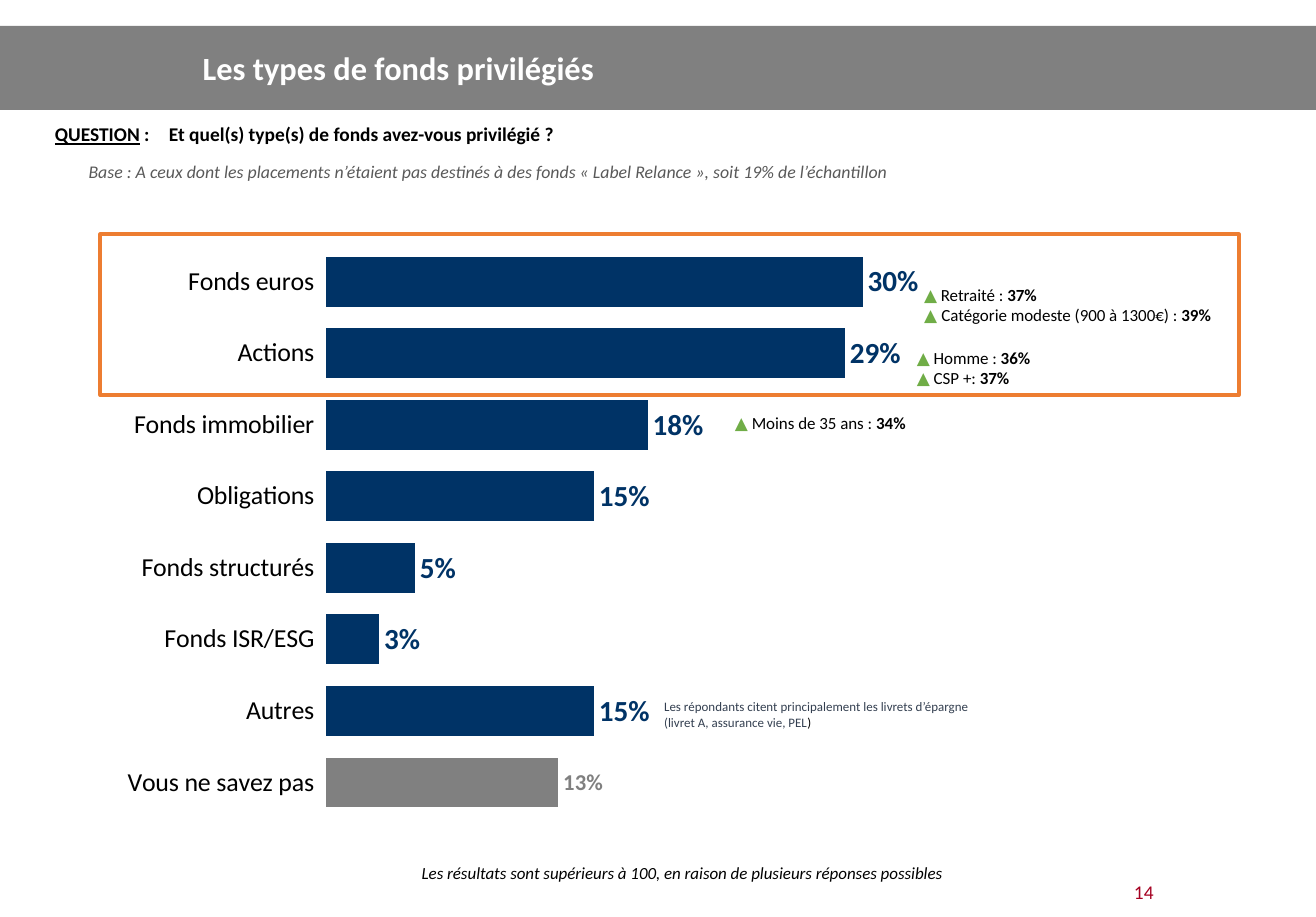
from lxml import etree
from pptx import Presentation
from pptx.chart.data import CategoryChartData
from pptx.dml.color import RGBColor
from pptx.enum.chart import XL_CHART_TYPE, XL_LABEL_POSITION, XL_TICK_MARK
from pptx.enum.shapes import MSO_SHAPE
from pptx.enum.text import MSO_ANCHOR, PP_ALIGN
from pptx.oxml.ns import qn
from pptx.util import Pt

BAR_CLUSTERED = XL_CHART_TYPE.BAR_CLUSTERED
OUTSIDE_END = XL_LABEL_POSITION.OUTSIDE_END
TICK_OUTSIDE = XL_TICK_MARK.OUTSIDE
RECTANGLE = MSO_SHAPE.RECTANGLE
MIDDLE = MSO_ANCHOR.MIDDLE
LEFT, CENTER, JUSTIFY = PP_ALIGN.LEFT, PP_ALIGN.CENTER, PP_ALIGN.JUSTIFY

COLORS = {
    "band": "808080", "white": "FFFFFF", "black": "000000", "navy": "003366",
    "orange": "ED7D31", "green": "70AD47", "base": "595959", "remark": "333F50",
    "page": "A50021",
}
FUNDS = {
    "Fonds euros": 0.30, "Actions": 0.29, "Fonds immobilier": 0.18,
    "Obligations": 0.15, "Fonds structurés": 0.05, "Fonds ISR/ESG": 0.03,
    "Autres": 0.15, "Vous ne savez pas": 0.13,
}
NOTES = [
    (563.8, 172, [("Retraité : ", "37%", "Calibri"),
                  ("Catégorie modeste (900 à 1300€) : ", "39%", "Lato")]),
    (559.4, 211, [("Homme : ", "36%", "Calibri"), ("CSP +: ", "37%", "Calibri")]),
    (447, 251.3, [("Moins de 35 ans : ", "34%", "Calibri")]),
]


class SlideBuilder:
    def __init__(self, deck, slide, font_name):
        self.deck = deck
        self.slide = slide
        self.font_name = font_name

    def color(self, name):
        return RGBColor.from_string(COLORS[name])

    def format_font(self, font, color="black", **values):
        for name, value in {"name": self.font_name, **values}.items():
            setattr(font, name, value)
        font.color.rgb = self.color(color)

    def fill_frame(self, frame, paragraphs, align=LEFT, **margins):
        frame.word_wrap = True
        for name, value in margins.items():
            setattr(frame, f"margin_{name}", Pt(value))
        for index, runs in enumerate(paragraphs):
            para = frame.add_paragraph() if index else frame.paragraphs[0]
            para.alignment = align
            for text, values in runs:
                span = para.add_run()
                span.text = text
                self.format_font(span.font, **values)

    def text(self, bounds, paragraphs, align=LEFT, **margins):
        box = self.slide.shapes.add_textbox(*map(Pt, bounds))
        self.fill_frame(box.text_frame, paragraphs, align, **margins)
        return box

    def title(self, bounds, text):
        title = self.slide.shapes.title
        for name, value in zip(("left", "top", "width", "height"), bounds):
            setattr(title, name, Pt(value))
        title.text_frame.vertical_anchor = MIDDLE
        style = {"size": Pt(20), "bold": True, "color": "white"}
        self.fill_frame(title.text_frame, [[(text, style)]])

    def rectangle(self, bounds, fill, line=None):
        box = self.slide.shapes.add_shape(RECTANGLE, *map(Pt, bounds))
        box.shadow.inherit = False
        box.fill.solid()
        box.fill.fore_color.rgb = self.color(fill)
        if line:
            box.line.color.rgb = self.color(line)
            box.line.width = Pt(2.25)
        else:
            box.line.fill.background()
        return box

    def send_to_back(self, shape):
        self.slide.shapes._spTree.insert(2, shape._element)

    def question(self, bounds, label, text):
        style = {"size": Pt(12), "bold": True}
        runs = [(label, {**style, "underline": True}), (f" :\t{text}", style)]
        box = self.text(bounds, [runs], JUSTIFY, left=6.5, top=3, right=26, bottom=3)
        properties = box.text_frame.paragraphs[0]._p.get_or_add_pPr()
        properties.set("marL", str(Pt(70.5)))
        properties.set("indent", str(-Pt(70.5)))

    def note(self, left, top, rows):
        style = {"size": Pt(10.5)}
        paragraphs = [
            [("▲ ", {**style, "color": "green", "name": marker_font}),
             (label, style), (value, {**style, "bold": True})]
            for label, value, marker_font in rows
        ]
        self.text((left, top, 202, 7.2 + 12.6 * len(rows)), paragraphs)

    def paint_bar(self, bar_format, color):
        bar_format.fill.solid()
        bar_format.fill.fore_color.rgb = self.color(color)
        bar_format.line.color.rgb = self.color("white")
        bar_format.line.width = Pt(0.75)

    def bar_chart(self, bounds, values, maximum, plot_area):
        data = CategoryChartData(number_format="0%")
        data.categories = values.keys()
        data.add_series("Types de fonds", values.values())
        chart = self.slide.shapes.add_chart(BAR_CLUSTERED, *map(Pt, bounds), data).chart
        chart.has_legend = False
        chart.has_title = False
        self.format_font(chart.font, size=Pt(14))

        categories = chart.category_axis
        categories.reverse_order = True
        categories.major_tick_mark = TICK_OUTSIDE
        categories.format.line.fill.background()
        self.format_font(categories.tick_labels.font, size=Pt(16))

        scale = chart.value_axis
        for name, value in {"minimum_scale": 0, "maximum_scale": maximum,
                            "has_major_gridlines": False, "visible": False}.items():
            setattr(scale, name, value)

        plot = chart.plots[0]
        plot.gap_width = 40
        plot.vary_by_categories = False
        series = plot.series[0]
        self.paint_bar(series.format, "navy")
        labels = series.data_labels
        for name, value in {"show_value": True, "position": OUTSIDE_END,
                            "number_format": "0%",
                            "number_format_is_linked": False}.items():
            setattr(labels, name, value)
        self.format_font(labels.font, "navy", size=Pt(18), bold=True)

        last = series.points[len(values) - 1]
        self.paint_bar(last.format, "band")
        self.format_font(last.data_label.font, "band", size=Pt(14), bold=True)
        last.data_label.position = OUTSIDE_END
        self.place_plot(chart, plot_area)

    def place_plot(self, chart, plot_area):
        area = chart._chartSpace.chart.plotArea
        for old in area.findall(qn("c:layout")):
            area.remove(old)
        layout = etree.Element(qn("c:layout"))
        manual = etree.SubElement(layout, qn("c:manualLayout"))
        settings = {"layoutTarget": "inner", "xMode": "edge", "yMode": "edge",
                    **dict(zip("xywh", plot_area))}
        for name, value in settings.items():
            etree.SubElement(manual, qn(f"c:{name}")).set("val", str(value))
        area.insert(0, layout)


def main():
    deck = Presentation()
    deck.slide_width, deck.slide_height = Pt(813), Pt(566.6)
    page = SlideBuilder(deck, deck.slides.add_slide(deck.slide_layouts[5]), "Calibri")

    page.send_to_back(page.rectangle((0, 16, 813, 52), "band"))
    page.title((118, 16, 682, 52), "Les types de fonds privilégiés")
    page.rectangle((62, 144.7, 703.4, 99.4), "white", "orange")
    page.text((54.7, 99.4, 625, 13.7), [[(
        "Base : A ceux dont les placements n’étaient pas destinés à des fonds "
        "« Label Relance », soit 19% de l’échantillon",
        {"size": Pt(11), "italic": True, "color": "base"})]],
        JUSTIFY, left=0, top=0, right=0, bottom=0)
    page.question((27.4, 72.7, 768, 20), "QUESTION",
                  "Et quel(s) type(s) de fonds avez-vous privilégié ?")
    page.bar_chart((36, 144.7, 612, 361.4), FUNDS, 0.35, (0.27, 0.02, 0.633, 0.979))
    page.text((253.4, 529.2, 411, 21), [[(
        "Les résultats sont supérieurs à 100, en raison de plusieurs réponses possibles",
        {"size": Pt(10.5), "italic": True})]])
    page.text((403.2, 428.4, 213, 26.6), [[
        ("Les répondants citent principalement les livrets d’épargne "
         "(livret A, assurance vie, PEL", {"size": Pt(8), "color": "remark"}),
        (")", {"size": Pt(8)})]])
    for left, top, rows in NOTES:
        page.note(left, top, rows)
    page.text((685.4, 540, 42.5, 21.6),
              [[("14", {"size": Pt(12), "color": "page"})]], CENTER)

    deck.save("out.pptx")


if __name__ == "__main__":
    main()
